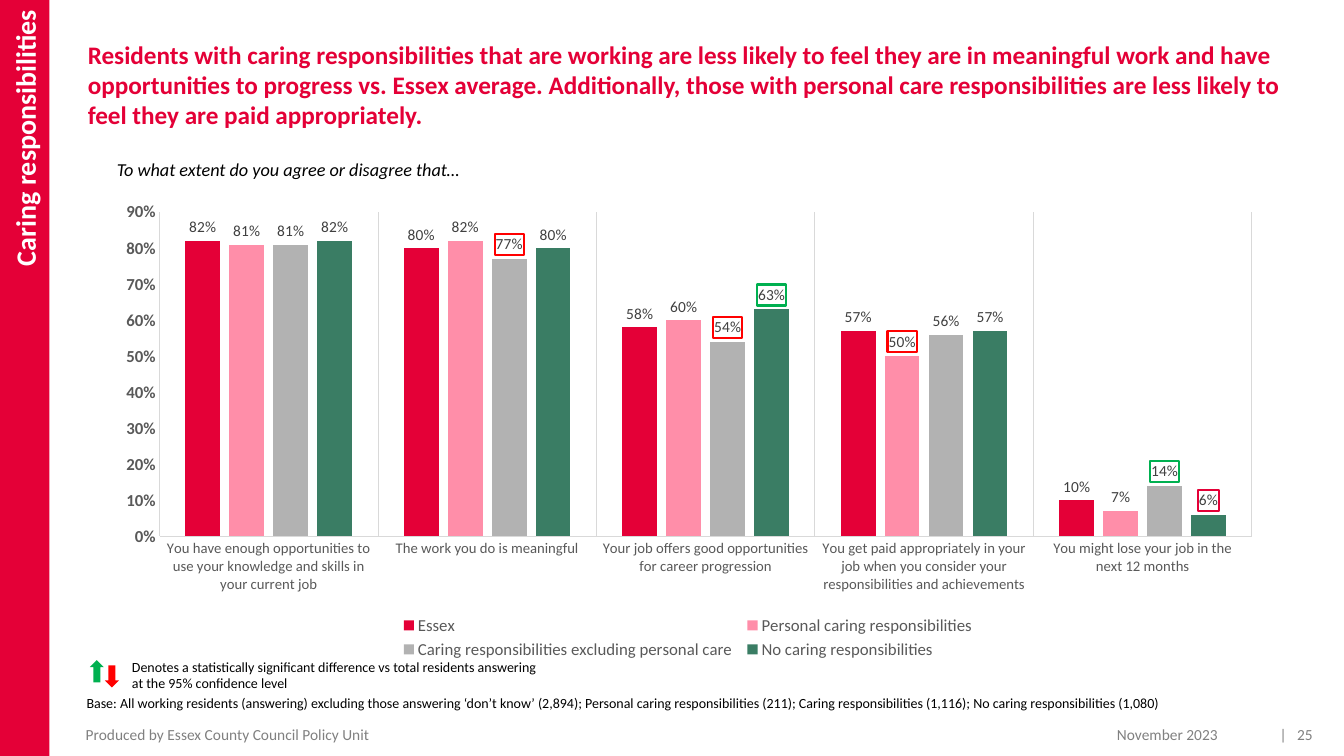
from pptx import Presentation
from pptx import util as u
from pptx.chart.data import CategoryChartData
from pptx.dml.color import RGBColor
from pptx.enum import chart as charts, shapes, text
from pptx.oxml import parse_xml
from pptx.oxml.ns import nsdecls, qn

WIDTH, HEIGHT = u.Inches(13.33), u.Inches(7.5)
FONT = "Calibri"
RED = RGBColor(0xE4, 0x00, 0x37)
PINK = RGBColor(0xFF, 0x8E, 0xA9)
GREY = RGBColor(0xB2, 0xB2, 0xB2)
TEAL = RGBColor(0x3A, 0x7D, 0x64)
LOWER = RGBColor(0xFF, 0x00, 0x00)
HIGHER = RGBColor(0x00, 0xB0, 0x50)
BLACK = RGBColor(0x00, 0x00, 0x00)
WHITE = RGBColor(0xFF, 0xFF, 0xFF)
FOOTER = RGBColor(0x80, 0x80, 0x80)
AXIS_TEXT = RGBColor(0x59, 0x59, 0x59)
LABEL_TEXT = RGBColor(0x40, 0x40, 0x40)
GRID = RGBColor(0xD9, 0xD9, 0xD9)
LEFT, RIGHT = text.PP_ALIGN.LEFT, text.PP_ALIGN.RIGHT
TOP, MIDDLE = text.MSO_ANCHOR.TOP, text.MSO_ANCHOR.MIDDLE

CATEGORIES = (
    "You have enough opportunities to use your knowledge and skills in your current job",
    "The work you do is meaningful",
    "Your job offers good opportunities for career progression",
    "You get paid appropriately in your job when you consider your responsibilities and achievements",
    "You might lose your job in the next 12 months",
)
SERIES = (
    ("Essex", RED, (0.82, 0.8, 0.58, 0.57, 0.1), {}),
    ("Personal caring responsibilities", PINK, (0.81, 0.82, 0.6, 0.5, 0.07), {3: LOWER}),
    ("Caring responsibilities excluding personal care", GREY,
     (0.81, 0.77, 0.54, 0.56, 0.14), {1: LOWER, 2: LOWER, 4: HIGHER}),
    ("No caring responsibilities", TEAL, (0.82, 0.8, 0.63, 0.57, 0.06), {2: HIGHER, 4: RED}),
)


def area(left, top, width, height):
    """Turn percentages of the slide into a left, top, width, height frame."""
    return (round(WIDTH * left / 100), round(HEIGHT * top / 100),
            round(WIDTH * width / 100), round(HEIGHT * height / 100))


def set_font(font, size, color, bold=False, italic=False):
    """Format a font in the slide's typeface."""
    font.name, font.size = FONT, u.Pt(size)
    font.bold, font.italic = bold, italic
    font.color.rgb = color


def write(shape, words, size=10, color=BLACK, bold=False, italic=False,
          align=LEFT, anchor=TOP, insets=(0.1, 0.05, 0.1, 0.05)):
    """Put one formatted paragraph into a shape."""
    frame = shape.text_frame
    frame.word_wrap, frame.auto_size = True, text.MSO_AUTO_SIZE.NONE
    frame.vertical_anchor = anchor
    (frame.margin_left, frame.margin_top,
     frame.margin_right, frame.margin_bottom) = map(u.Inches, insets)
    paragraph = frame.paragraphs[0]
    paragraph.alignment = align
    run = paragraph.add_run()
    run.text = words
    set_font(run.font, size, color, bold, italic)


def add_text(slide, frame, words, **style):
    """Add a text box with one paragraph."""
    write(slide.shapes.add_textbox(*area(*frame)), words, **style)


def add_filled(slide, kind, frame, color):
    """Add a flat preset shape without outline."""
    shape = slide.shapes.add_shape(kind, *area(*frame))
    shape.shadow.inherit = False
    shape.fill.solid()
    shape.fill.fore_color.rgb = color
    shape.line.fill.background()
    return shape


def set_layout(parent, index, target, x, y, width, height):
    """Fix the place of a chart part as shares of the chart."""
    for layout in parent.findall(qn("c:layout")):
        parent.remove(layout)
    parent.insert(index, parse_xml(
        f'<c:layout {nsdecls("c")}><c:manualLayout>{target}'
        '<c:xMode val="edge"/><c:yMode val="edge"/>'
        f'<c:x val="{x}"/><c:y val="{y}"/><c:w val="{width}"/><c:h val="{height}"/>'
        '</c:manualLayout></c:layout>'))


def outline_label(point, color):
    """Frame the data label of a significantly different value."""
    label = point.data_label
    font = label.font
    set_font(font, 11, LABEL_TEXT)
    label.position = charts.XL_LABEL_POSITION.OUTSIDE_END
    text_properties = next(font._element.iterancestors(qn("c:txPr")))
    text_properties.addprevious(parse_xml(
        f'<c:spPr {nsdecls("c", "a")}><a:noFill/><a:ln w="{u.Pt(1.5)}">'
        f'<a:solidFill><a:srgbClr val="{color}"/></a:solidFill></a:ln></c:spPr>'))


def format_series(series, color, outlined):
    """Colour one series and label its columns."""
    series.format.fill.solid()
    series.format.fill.fore_color.rgb = color
    series.invert_if_negative = False
    labels = series.data_labels
    labels.show_value = True
    labels.number_format, labels.number_format_is_linked = "0%", False
    labels.position = charts.XL_LABEL_POSITION.OUTSIDE_END
    set_font(labels.font, 11, LABEL_TEXT)
    for index, outline in outlined.items():
        outline_label(series.points[index], outline)


def format_axes(chart):
    """Set scales, fonts and grid lines of both axes."""
    category, value = chart.category_axis, chart.value_axis
    for axis in (category, value):
        axis.major_tick_mark = axis.minor_tick_mark = charts.XL_TICK_MARK.NONE
    set_font(category.tick_labels.font, 10.5, AXIS_TEXT)
    category.has_major_gridlines = True
    for line in (category.format.line, category.major_gridlines.format.line):
        line.color.rgb, line.width = GRID, u.Pt(0.75)
    set_font(value.tick_labels.font, 12, AXIS_TEXT, bold=True)
    value.tick_labels.number_format = "0%"
    value.tick_labels.number_format_is_linked = False
    value.minimum_scale, value.maximum_scale, value.major_unit = 0, 0.9, 0.1
    value.has_major_gridlines = False
    value.format.line.fill.background()


def add_agreement_chart(slide, frame):
    """Add the clustered columns with their legend."""
    data = CategoryChartData(number_format="0%")
    data.categories = CATEGORIES
    for name, _, values, _ in SERIES:
        data.add_series(name, values)
    chart = slide.shapes.add_chart(
        charts.XL_CHART_TYPE.COLUMN_CLUSTERED, *area(*frame), data).chart
    set_font(chart.font, 10, BLACK)
    chart.has_title = False
    plot = chart.plots[0]
    plot.gap_width, plot.overlap, plot.vary_by_categories = 150, -27, False
    for series, (_, color, _, outlined) in zip(plot.series, SERIES):
        format_series(series, color, outlined)
    format_axes(chart)
    chart.has_legend = True
    legend = chart.legend
    legend.position = charts.XL_LEGEND_POSITION.BOTTOM
    legend.include_in_layout = False
    set_font(legend.font, 12, AXIS_TEXT)
    set_layout(legend._element, 1, "", 0.25, 0.89, 0.5, 0.11)
    set_layout(chart._chartSpace.chart.plotArea, 0,
               '<c:layoutTarget val="inner"/>', 0.05, 0.04, 0.93, 0.69)


def add_title(slide, frame, words):
    """Move the title placeholder and write the headline."""
    title = slide.shapes.title
    title.left, title.top, title.width, title.height = area(*frame)
    write(title, words, size=18, color=RED, bold=True, insets=(0.1, 0.05, 0.1, 0))


def add_section_band(slide, frame, words):
    """Add the side band with its upward reading section name."""
    band = add_filled(slide, shapes.MSO_SHAPE.RECTANGLE, frame, RED)
    write(band, words, size=20, color=WHITE, bold=True, align=RIGHT,
          anchor=MIDDLE, insets=(0.1, 0.1, 0.1, 0.05))
    band.text_frame._txBody.bodyPr.set("vert", "vert270")


def add_footer(slide):
    """Add producer, date and page number on one line."""
    for left, width, words, align, insets in (
            (5.7, 49.06, "Produced by Essex County Council Policy Unit", LEFT, (0.09, 0.05, 0.1, 0.05)),
            (72.62, 18, "November 2023", RIGHT, (0.1, 0.05, 0, 0.05)),
            (91.3, 6.38, "|   25", RIGHT, (0.1, 0.05, 0, 0.05))):
        add_text(slide, (left, 96.13, width, 2), words, size=11, color=FOOTER,
                 align=align, anchor=MIDDLE, insets=insets)


def main():
    """Build and save the slide."""
    presentation = Presentation()
    presentation.slide_width, presentation.slide_height = WIDTH, HEIGHT
    slide = presentation.slides.add_slide(presentation.slide_layouts[5])
    add_title(slide, (5.78, 4.53, 91.9, 15.73),
              "Residents with caring responsibilities that are working are less likely to feel they are in "
              "meaningful work and have opportunities to progress vs. Essex average. Additionally, those with "
              "personal care responsibilities are less likely to feel they are paid appropriately.")
    add_text(slide, (5.7, 20.27, 90.55, 4.27), "To what extent do you agree or disagree that…",
             size=13, italic=True, insets=(0.4, 0.05, 0.1, 0.05))
    add_section_band(slide, (0, 0, 3.68, 100), "Caring responsibilities")
    add_footer(slide)
    add_text(slide, (5.7, 91.2, 90.55, 3.6),
             "Base: All working residents (answering) excluding those answering ‘don’t know’ (2,894); Personal "
             "caring responsibilities (211); Caring responsibilities (1,116); No caring responsibilities (1,080)")
    add_agreement_chart(slide, (7.5, 25.6, 87.4, 62.13))
    add_filled(slide, shapes.MSO_SHAPE.UP_ARROW, (6.68, 87.33, 1.05, 2.93), HIGHER)
    add_text(slide, (9.08, 86.4, 32.48, 5.87),
             "Denotes a statistically significant difference vs total residents answering "
             "at the 95% confidence level")
    lower = add_filled(slide, shapes.MSO_SHAPE.UP_ARROW, (7.8, 88, 1.05, 2.93), LOWER)
    lower.rotation = 180
    presentation.save("out.pptx")


if __name__ == "__main__":
    main()
